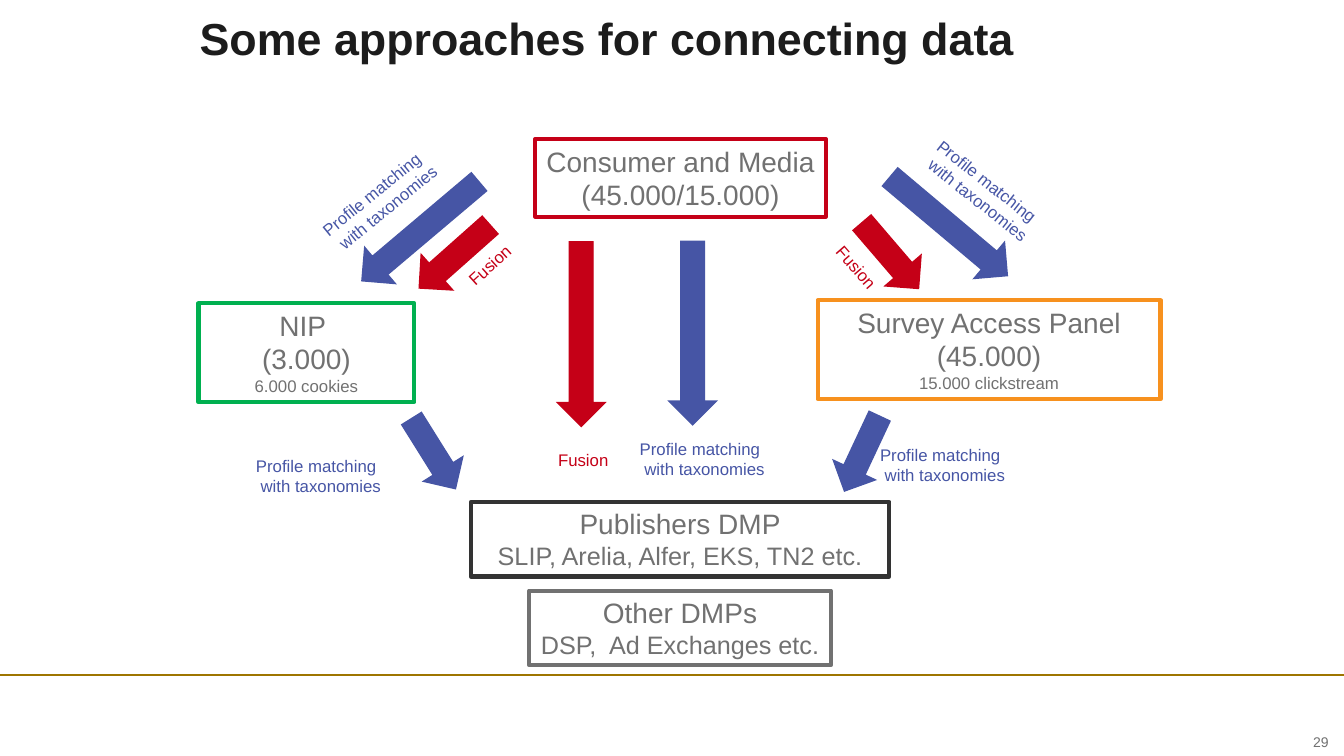
from pptx import Presentation
from pptx.dml.color import RGBColor
from pptx.enum.shapes import MSO_CONNECTOR, MSO_SHAPE
from pptx.enum.text import MSO_ANCHOR, PP_ALIGN
from pptx.oxml.ns import qn
from pptx.util import Inches, Pt
from lxml import etree

RECTANGLE = MSO_SHAPE.RECTANGLE
LEFT_ARROW = MSO_SHAPE.LEFT_ARROW
STRAIGHT = MSO_CONNECTOR.STRAIGHT
LEFT, CENTER = PP_ALIGN.LEFT, PP_ALIGN.CENTER
TOP, MIDDLE = MSO_ANCHOR.TOP, MSO_ANCHOR.MIDDLE

RED = RGBColor(0xC5, 0x00, 0x17)
BLUE = RGBColor(0x46, 0x55, 0xA5)
GREEN = RGBColor(0x00, 0xB0, 0x50)
ORANGE = RGBColor(0xF7, 0x91, 0x1E)
CHARCOAL = RGBColor(0x33, 0x33, 0x33)
GRAY = RGBColor(0x71, 0x71, 0x71)
BLACK = RGBColor(0x1C, 0x1C, 0x1C)
GOLD = RGBColor(0x9E, 0x75, 0x00)

FONT = "Arial"
FUSION = ["Fusion"]
MATCHING = ["Profile matching", " with taxonomies"]
MATCHING_CENTERED = ["Profile matching ", " with taxonomies"]

BOXES = [
    ((5.31, 1.38, 2.88, 0.77), RED, False,
     [("Consumer and Media", 20), ("(45.000/15.000)", 20)]),
    ((1.97, 3.01, 2.14, 0.98), GREEN, True,
     [("NIP ", 20), ("(3.000)", 20), ("6.000 cookies", 12)]),
    ((8.11, 2.98, 3.4, 0.98), ORANGE, True,
     [("Survey Access Panel (45.000)", 20), ("15.000 clickstream", 12)]),
    ((4.67, 4.98, 4.15, 0.74), CHARCOAL, False,
     [("Publishers DMP", 20), ("SLIP, Arelia, Alfer, EKS, TN2 etc.", 18)]),
    ((5.25, 5.86, 2.99, 0.74), GRAY, False,
     [("Other DMPs", 20), ("DSP,  Ad Exchanges etc.", 18)]),
]

ARROWS = [
    ((8.4, 2.3, 0.86, 0.47), 229.4, RED),
    ((4.04, 2.31, 0.94, 0.47), 318.4, RED),
    ((4.85, 3.08, 1.83, 0.47), 270, RED),
    ((8.14, 4.27, 0.82, 0.46), 295.1, BLUE),
    ((8.65, 2.01, 1.52, 0.47), 220.1, BLUE),
    ((3.41, 2.06, 1.52, 0.47), 319.8, BLUE),
    ((5.96, 3.07, 1.82, 0.47), 270, BLUE),
    ((3.89, 4.27, 0.82, 0.46), 238, BLUE),
]

LABELS = [
    ((8.14, 2.5, 0.71, 0.3), 48.9, RED, FUSION, CENTER),
    ((4.5, 2.48, 0.71, 0.3), 317.8, RED, FUSION, CENTER),
    ((5.43, 4.41, 0.71, 0.3), 0, RED, FUSION, CENTER),
    ((6.24, 4.3, 1.45, 0.5), 0, BLUE, MATCHING_CENTERED, CENTER),
    ((3.04, 1.74, 1.45, 0.5), 320.9, BLUE, MATCHING_CENTERED, CENTER),
    ((9.02, 1.64, 1.45, 0.5), 38.3, BLUE, MATCHING_CENTERED, CENTER),
    ((8.63, 4.36, 1.45, 0.5), 0, BLUE, MATCHING, LEFT),
    ((2.44, 4.47, 1.45, 0.5), 0, BLUE, MATCHING, LEFT),
]


def write_lines(shape, lines, color, align=CENTER, bold=False):
    """Write each (text, size) pair as one paragraph of the shape."""
    frame = shape.text_frame
    for index, (text, size) in enumerate(lines):
        paragraph = frame.add_paragraph() if index else frame.paragraphs[0]
        paragraph.alignment = align
        run = paragraph.add_run()
        run.text = text
        run.font.name = FONT
        run.font.size = Pt(size)
        run.font.bold = bold
        run.font.color.rgb = color


def add_plain_text(slide, place, text, size, color, align, anchor, bold=False):
    """Add a wrapping one-line text box without margins."""
    box = slide.shapes.add_textbox(*map(Inches, place))
    frame = box.text_frame
    frame.word_wrap = True
    frame.vertical_anchor = anchor
    frame.margin_left = frame.margin_right = Inches(0)
    frame.margin_top = frame.margin_bottom = Inches(0)
    write_lines(box, [(text, size)], color, align, bold)


def add_label(slide, place, rotation, color, texts, align):
    """Add a small, possibly rotated, arrow label."""
    label = slide.shapes.add_textbox(*map(Inches, place))
    label.rotation = rotation
    label.text_frame.word_wrap = False
    write_lines(label, [(text, 12) for text in texts], color, align)


def add_box(slide, place, color, wrap, lines):
    """Add an outlined data source box."""
    box = slide.shapes.add_shape(RECTANGLE, *map(Inches, place))
    box.shadow.inherit = False
    box.fill.background()
    box.line.color.rgb = color
    box.line.width = Pt(3)
    box.text_frame.word_wrap = wrap
    box.text_frame.vertical_anchor = TOP
    write_lines(box, lines, GRAY)


def add_arrow(slide, place, rotation, color):
    """Add a solid, sharp-cornered block arrow turned to its direction."""
    arrow = slide.shapes.add_shape(LEFT_ARROW, *map(Inches, place))
    arrow.shadow.inherit = False
    arrow.rotation = rotation
    arrow.fill.solid()
    arrow.fill.fore_color.rgb = color
    arrow.line.color.rgb = color
    arrow.line.width = Pt(1)
    outline = arrow._element.spPr.find(qn("a:ln"))
    etree.SubElement(outline, qn("a:miter"), lim="800000")


def add_footer_rule(slide, width):
    """Add the thin rule across the foot of the slide."""
    rule = slide.shapes.add_connector(STRAIGHT, 0, Inches(6.7), width, Inches(6.7))
    rule.line.color.rgb = GOLD
    rule.line.width = Pt(1.5)
    etree.SubElement(rule._element.spPr, qn("a:effectLst"))


def main():
    """Build and save the slide."""
    presentation = Presentation()
    presentation.slide_width = Inches(13.33)
    presentation.slide_height = Inches(7.5)
    slide = presentation.slides.add_slide(presentation.slide_layouts[6])
    add_footer_rule(slide, presentation.slide_width)
    add_plain_text(slide, (1.98, 0.11, 9.52, 1.13),
                   "Some approaches for connecting data", 32, BLACK, LEFT, TOP, True)
    add_plain_text(slide, (12.73, 7.22, 0.74, 0.28), "29", 10, GRAY, CENTER, MIDDLE)
    for box in BOXES:
        add_box(slide, *box)
    for arrow in ARROWS:
        add_arrow(slide, *arrow)
    for label in LABELS:
        add_label(slide, *label)
    presentation.save("out.pptx")


if __name__ == "__main__":
    main()
